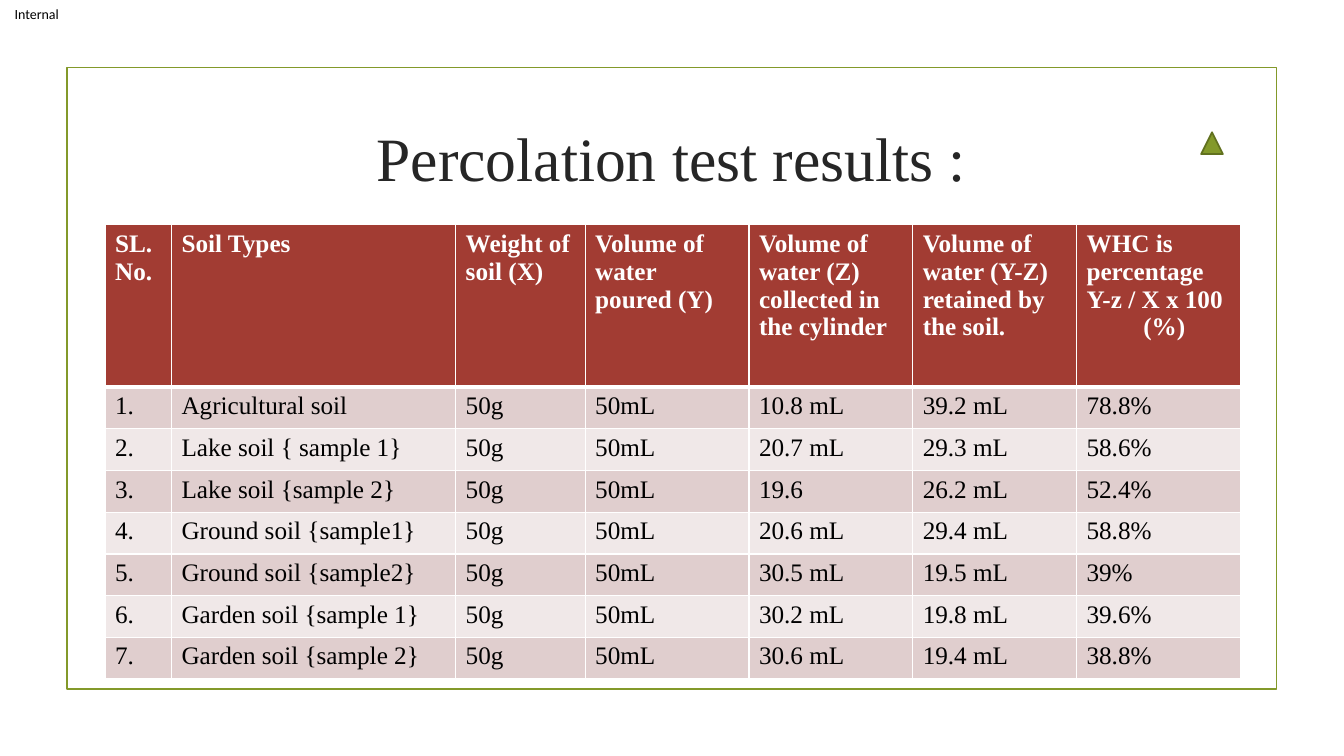
from lxml import etree
from pptx import Presentation
from pptx.dml.color import RGBColor
from pptx.enum.shapes import MSO_SHAPE
from pptx.enum.text import MSO_ANCHOR, PP_ALIGN
from pptx.oxml.ns import qn
from pptx.util import Pt

RECTANGLE = MSO_SHAPE.RECTANGLE
TRIANGLE = MSO_SHAPE.ISOSCELES_TRIANGLE
MIDDLE = MSO_ANCHOR.MIDDLE
CENTER = PP_ALIGN.CENTER

COLORS = {
    "green": "83992A",
    "dark green": "61711F",
    "title": "262626",
    "black": "000000",
    "white": "FFFFFF",
    "header": "A23C33",
    "odd row": "E0CECE",
    "even row": "F0E8E8",
}
SERIF = "Times New Roman"
SANS = "Calibri"

COLUMN_WIDTHS = [47.5, 203, 92.5] + [117] * 4
HEADER_HEIGHT = 116
ROW_HEIGHT = 29.8
HEADERS = [
    "SL. No.",
    "Soil Types",
    "Weight of soil (X)",
    "Volume of water poured (Y)",
    "Volume of water (Z) collected in the cylinder",
    "Volume of water (Y-Z) retained by the soil.",
    "WHC is percentage\nY-z / X x 100\n(%)",
]
# soil, water collected, water retained, water holding capacity
RESULTS = [
    ("Agricultural soil", "10.8 mL", "39.2 mL", "78.8%"),
    ("Lake soil { sample 1}", "20.7 mL", "29.3 mL", "58.6%"),
    ("Lake soil {sample 2}", "19.6", "26.2 mL", "52.4%"),
    ("Ground soil {sample1}", "20.6 mL", "29.4 mL", "58.8%"),
    ("Ground soil {sample2}", "30.5 mL", "19.5 mL", "39%"),
    ("Garden soil {sample 1}", "30.2 mL", "19.8 mL", "39.6%"),
    ("Garden soil {sample 2}", "30.6 mL", "19.4 mL", "38.8%"),
]


def rgb(name):
    return RGBColor.from_string(COLORS[name])


class SlideBuilder:
    def __init__(self, slide):
        self.slide = slide

    def format_text(self, frame, size, font, color, bold=False):
        for paragraph in frame.paragraphs:
            for run in paragraph.runs:
                run.font.size = Pt(size)
                run.font.name = font
                run.font.bold = bold
                run.font.color.rgb = rgb(color)

    def shape(self, preset, left, top, width, height, line, fill=None):
        shape = self.slide.shapes.add_shape(
            preset, Pt(left), Pt(top), Pt(width), Pt(height))
        shape.shadow.inherit = False
        shape.line.color.rgb = rgb(line)
        shape.line.width = Pt(1.25)
        if fill:
            shape.fill.solid()
            shape.fill.fore_color.rgb = rgb(fill)
        else:
            shape.fill.background()

    def centered_text(self, text, left, top, width, height, size, font, color):
        box = self.slide.shapes.add_textbox(
            Pt(left), Pt(top), Pt(width), Pt(height))
        frame = box.text_frame
        frame.word_wrap = True
        frame.vertical_anchor = MIDDLE
        frame.margin_left = frame.margin_right = 0
        frame.margin_top = frame.margin_bottom = 0
        frame.text = text
        frame.paragraphs[0].alignment = CENTER
        self.format_text(frame, size, font, color)

    def cell_borders(self, cell, top, bottom):
        """Draw white borders; the side borders are 1 pt wide."""
        properties = cell._tc.get_or_add_tcPr()
        widths = {"a:lnL": 1, "a:lnR": 1, "a:lnT": top, "a:lnB": bottom}
        for position, (tag, width) in enumerate(widths.items()):
            border = etree.Element(qn(tag), w=str(Pt(width)))
            fill = etree.SubElement(border, qn("a:solidFill"))
            etree.SubElement(fill, qn("a:srgbClr"), val=COLORS["white"])
            properties.insert(position, border)

    def table(self, rows, left, top):
        height = HEADER_HEIGHT + ROW_HEIGHT * (len(rows) - 1)
        table = self.slide.shapes.add_table(
            len(rows), len(COLUMN_WIDTHS), Pt(left), Pt(top),
            Pt(sum(COLUMN_WIDTHS)), Pt(height)).table
        table.horz_banding = False
        for column, width in zip(table.columns, COLUMN_WIDTHS):
            column.width = Pt(width)
        for r, values in enumerate(rows):
            is_header = r == 0
            table.rows[r].height = Pt(HEADER_HEIGHT if is_header else ROW_HEIGHT)
            band = "header" if is_header else "odd row" if r % 2 else "even row"
            for c, value in enumerate(values):
                cell = table.cell(r, c)
                cell.text_frame.text = value
                cell.fill.solid()
                cell.fill.fore_color.rgb = rgb(band)
                self.format_text(cell.text_frame, 18, SERIF,
                                 "white" if is_header else "black", is_header)
                self.cell_borders(cell, top=3 if r == 1 else 1,
                                  bottom=3 if is_header else 1)
        return table


def main():
    presentation = Presentation()
    presentation.slide_width = Pt(960)
    presentation.slide_height = Pt(540)
    slide = presentation.slides.add_slide(presentation.slide_layouts[6])
    builder = SlideBuilder(slide)

    builder.shape(RECTANGLE, 47.8, 48.2, 864, 444, "green")
    builder.centered_text("Internal", 0, 0, 52.5, 20, 10, SANS, "black")
    builder.centered_text("Percolation test results :", 102, 77, 756, 70,
                          44, SERIF, "title")

    rows = [HEADERS] + [
        [f"{number}.", soil, "50g", "50mL", collected, retained, capacity]
        for number, (soil, collected, retained, capacity)
        in enumerate(RESULTS, 1)
    ]
    table = builder.table(rows, 75, 160.5)
    percent_sign = table.cell(0, len(HEADERS) - 1).text_frame.paragraphs[-1]
    percent_sign._p.get_or_add_pPr().set("marL", str(Pt(40.5)))

    builder.shape(TRIANGLE, 858, 94.5, 15.5, 15.5, "dark green", "green")
    presentation.save("out.pptx")


if __name__ == "__main__":
    main()
